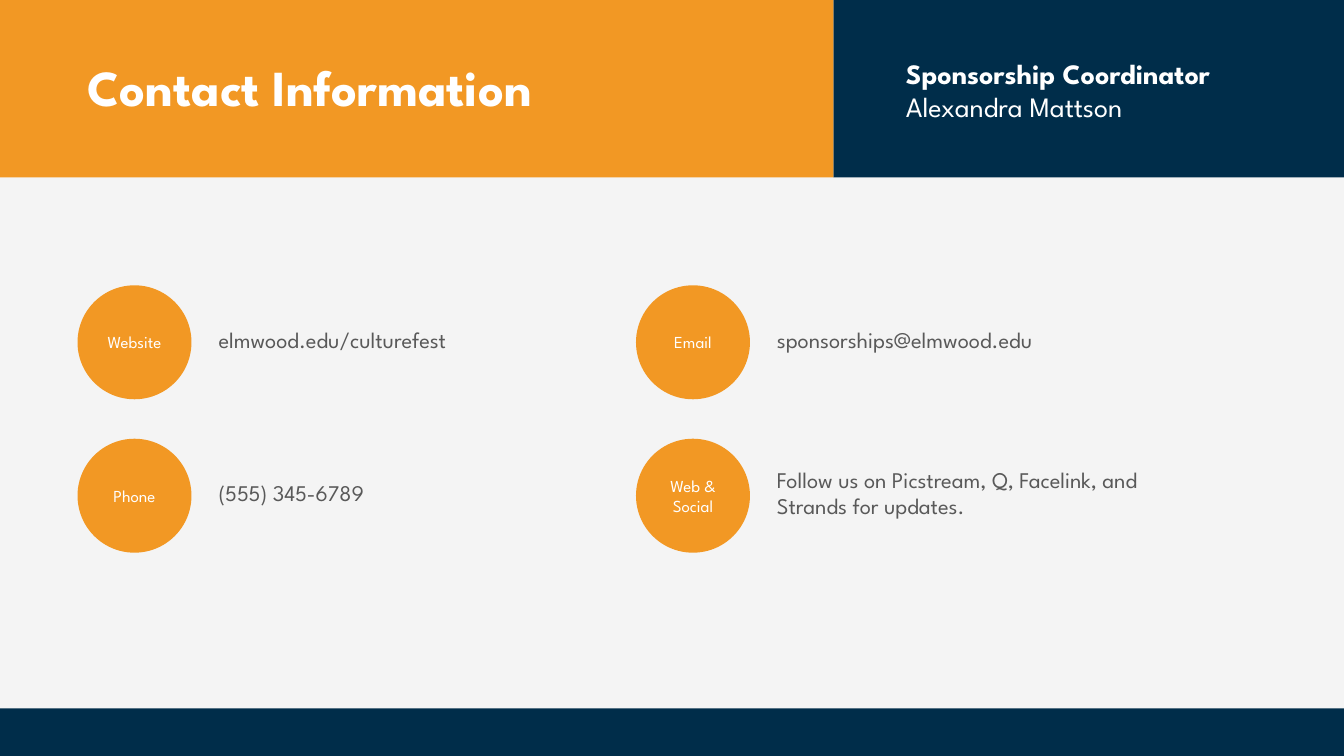
from dataclasses import dataclass

from pptx import Presentation
from pptx.dml.color import RGBColor
from pptx.enum.shapes import MSO_SHAPE
from pptx.enum.text import MSO_ANCHOR, PP_ALIGN
from pptx.util import Pt

RECTANGLE, OVAL = MSO_SHAPE.RECTANGLE, MSO_SHAPE.OVAL
TOP, MIDDLE = MSO_ANCHOR.TOP, MSO_ANCHOR.MIDDLE
LEFT, CENTER = PP_ALIGN.LEFT, PP_ALIGN.CENTER

TITLE = "Contact Information"
COORDINATOR_ROLE = "Sponsorship Coordinator"
COORDINATOR_NAME = "Alexandra Mattson"
# Rows of (label, detail, detail width, detail height)
CONTACTS = [
    [("Website", "elmwood.edu/culturefest", 256, 26.6),
     ("Email", "sponsorships@elmwood.edu", 371.5, 26.6)],
    [("Phone", "(555) 345-6789", 195, 26.6),
     ("Web & Social", "Follow us on Picstream, Q, Facelink, and Strands for updates.",
      305.3, 46)],
]


@dataclass(frozen=True)
class Theme:
    font: str = "League Spartan"
    background: str = "F4F4F4"
    navy: str = "002D4A"
    orange: str = "F29824"
    gray: str = "595959"
    white: str = "FFFFFF"
    title_size: float = 36
    coordinator_size: float = 20
    detail_size: float = 16
    label_size: float = 12


THEME = Theme()
WIDTH, HEIGHT = 960, 540
HEADER_TOP, HEADER_HEIGHT = -0.7, 127.4
HEADER_SPLIT = 595.4
FOOTER_HEIGHT = 34
MARGIN, GRID_TOP = 55.4, 203.8
COLUMN_STEP, ROW_STEP = 398.9, 109.6
CIRCLE = 81.4
DETAIL_OFFSET, DETAIL_RISE = 93.6, 2


def write(shape, lines, size, color, bold=(False,), align=LEFT, anchor=TOP, side_inset=7.2):
    """Fill a shape with one paragraph per line; bold holds one flag per line."""
    frame = shape.text_frame
    frame.word_wrap = True
    frame.vertical_anchor = anchor
    frame.margin_left = frame.margin_right = Pt(side_inset)
    for index, (line, is_bold) in enumerate(zip(lines, bold)):
        paragraph = frame.add_paragraph() if index else frame.paragraphs[0]
        paragraph.alignment = align
        run = paragraph.add_run()
        run.text = line
        run.font.name = THEME.font
        run.font.size = Pt(size)
        run.font.bold = is_bold
        run.font.color.rgb = RGBColor.from_string(color)


def add_filled(slide, kind, left, top, width, height, color):
    shape = slide.shapes.add_shape(kind, Pt(left), Pt(top), Pt(width), Pt(height))
    shape.shadow.inherit = False
    shape.fill.solid()
    shape.fill.fore_color.rgb = RGBColor.from_string(color)
    shape.line.fill.background()
    return shape


def add_text(slide, left, top, width, height, lines, **text_format):
    box = slide.shapes.add_textbox(Pt(left), Pt(top), Pt(width), Pt(height))
    write(box, lines, **text_format)


def add_contact(slide, left, top, label, detail, width, height):
    circle = add_filled(slide, OVAL, left, top, CIRCLE, CIRCLE, THEME.orange)
    write(circle, [label], THEME.label_size, THEME.white,
          align=CENTER, anchor=MIDDLE, side_inset=0)
    detail_top = top + (CIRCLE - height) / 2 - DETAIL_RISE
    add_text(slide, left + DETAIL_OFFSET, detail_top, width, height, [detail],
             size=THEME.detail_size, color=THEME.gray)


def main():
    presentation = Presentation()
    presentation.slide_width, presentation.slide_height = Pt(WIDTH), Pt(HEIGHT)
    slide = presentation.slides.add_slide(presentation.slide_layouts[6])
    slide.background.fill.solid()
    slide.background.fill.fore_color.rgb = RGBColor.from_string(THEME.background)

    add_filled(slide, RECTANGLE, HEADER_SPLIT, HEADER_TOP, WIDTH - HEADER_SPLIT,
               HEADER_HEIGHT, THEME.navy)
    add_filled(slide, RECTANGLE, 0, HEADER_TOP, HEADER_SPLIT, HEADER_HEIGHT, THEME.orange)
    add_filled(slide, RECTANGLE, 0, HEIGHT - FOOTER_HEIGHT, WIDTH, FOOTER_HEIGHT, THEME.navy)

    add_text(slide, MARGIN, 36.7, 407.5, 51, [TITLE],
             size=THEME.title_size, color=THEME.white, bold=(True,))
    add_text(slide, 640, 36.7, 283.7, 55.4, [COORDINATOR_ROLE, COORDINATOR_NAME],
             size=THEME.coordinator_size, color=THEME.white, bold=(True, False))

    for row, contacts in enumerate(CONTACTS):
        for column, contact in enumerate(contacts):
            add_contact(slide, MARGIN + column * COLUMN_STEP, GRID_TOP + row * ROW_STEP, *contact)

    presentation.save("out.pptx")


if __name__ == "__main__":
    main()
